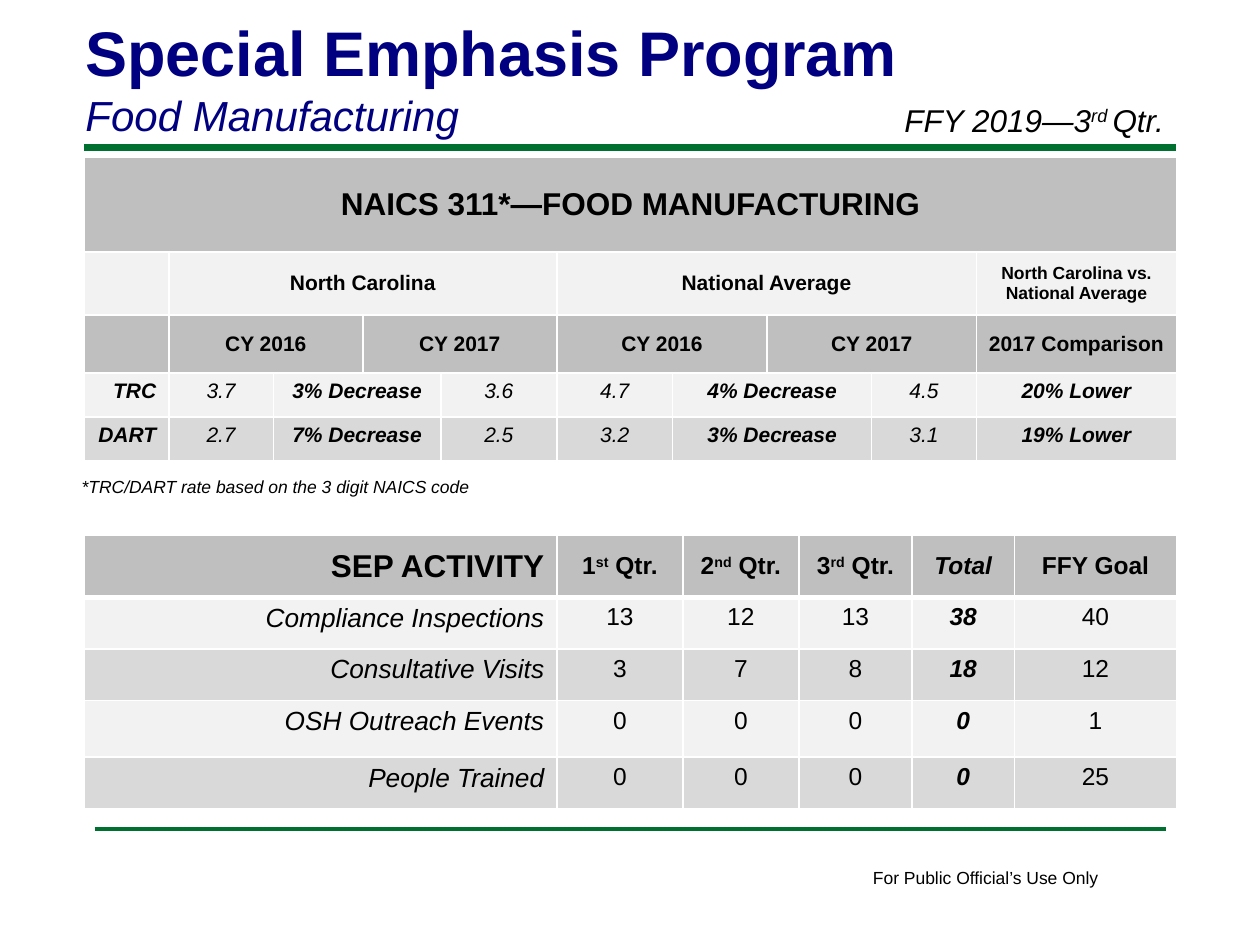
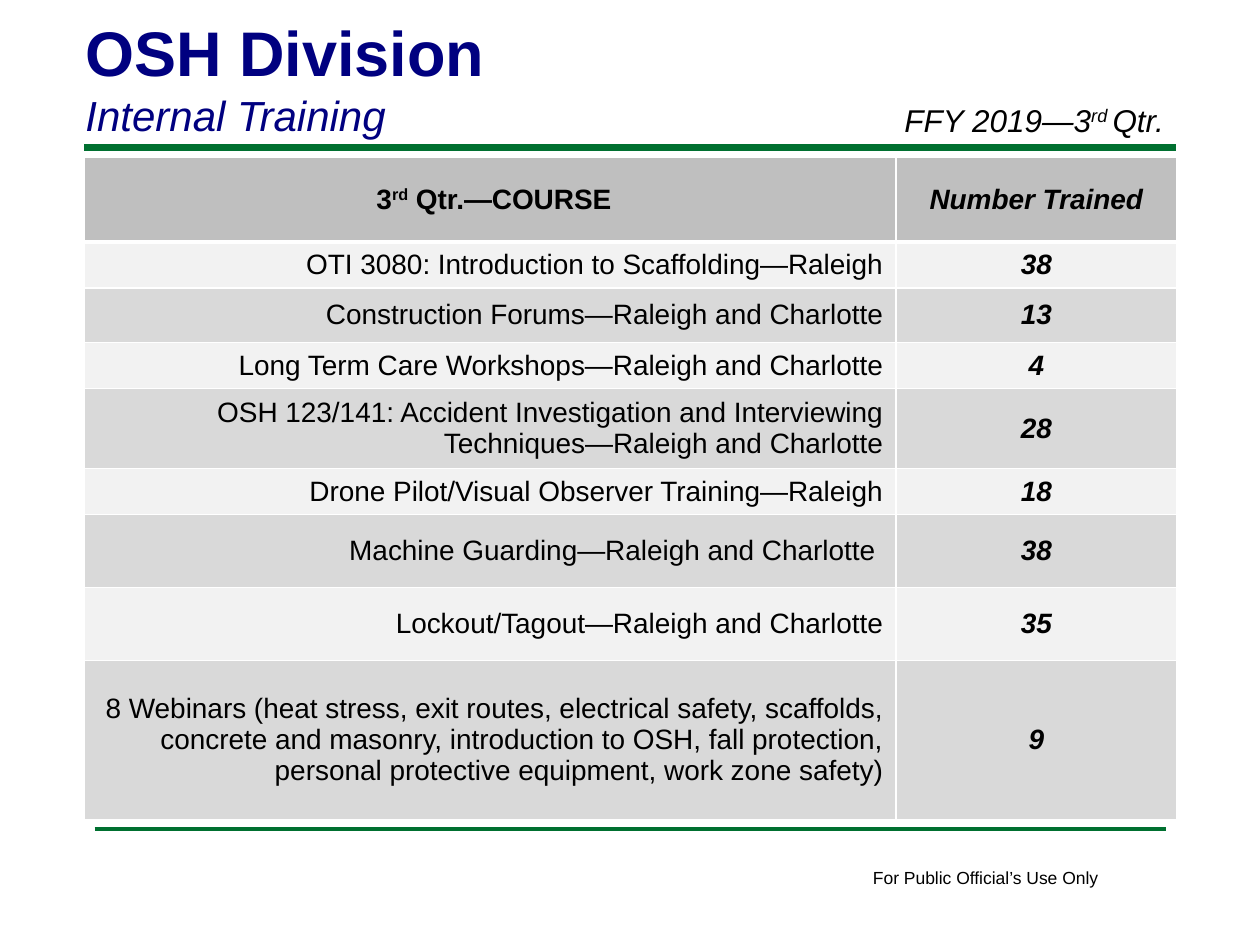
from dataclasses import dataclass, replace
from lxml import etree
from pptx import Presentation
from pptx.dml.color import RGBColor
from pptx.enum.shapes import MSO_CONNECTOR
from pptx.enum.text import MSO_ANCHOR, MSO_AUTO_SIZE, PP_ALIGN
from pptx.oxml.ns import qn
from pptx.util import Emu, Pt

PX = 9144
FONT = "Arial"
WHITE = RGBColor(0xFF, 0xFF, 0xFF)
BLACK = RGBColor(0x00, 0x00, 0x00)
NAVY = RGBColor(0x00, 0x00, 0x80)
GREEN = RGBColor(0x00, 0x70, 0x30)
HEADER_GRAY = RGBColor(0xBF, 0xBF, 0xBF)
LIGHT_GRAY = RGBColor(0xF2, 0xF2, 0xF2)
MID_GRAY = RGBColor(0xD9, 0xD9, 0xD9)

LEFT, CENTER, RIGHT = PP_ALIGN.LEFT, PP_ALIGN.CENTER, PP_ALIGN.RIGHT
TOP, MIDDLE = MSO_ANCHOR.TOP, MSO_ANCHOR.MIDDLE
STRAIGHT = MSO_CONNECTOR.STRAIGHT
GROW = MSO_AUTO_SIZE.SHAPE_TO_FIT_TEXT


@dataclass(frozen=True)
class Style:
    size: int
    bold: bool = False
    italic: bool = False
    align: PP_ALIGN = LEFT
    anchor: MSO_ANCHOR = MIDDLE
    color: RGBColor = BLACK


@dataclass(frozen=True)
class Cell:
    text: str
    style: Style
    span: int = 1


TITLE = Style(36, bold=True, color=NAVY)
SUBTITLE = Style(24, italic=True, color=NAVY)
PERIOD = Style(18, italic=True)
FOOTER = Style(10)
FOOTNOTE = Style(10, italic=True)


def px(length):
    return Emu(length * PX)


def write(paragraph, text, style):
    paragraph.alignment = style.align
    for index, piece in enumerate(text.split("^")):
        if not piece:
            continue
        run = paragraph.add_run()
        run.text = piece
        font = run.font
        font.name, font.size = FONT, Pt(style.size)
        font.bold, font.italic = style.bold, style.italic
        font.color.rgb = style.color
        if index % 2:
            run._r.get_or_add_rPr().set("baseline", "30000")


def add_text(slide, box, lines, wrap=True):
    frame = slide.shapes.add_textbox(*map(px, box)).text_frame
    frame.word_wrap = wrap
    frame.auto_size = GROW
    for index, (text, style) in enumerate(lines):
        paragraph = frame.add_paragraph() if index else frame.paragraphs[0]
        write(paragraph, text, style)


def add_rule(slide, left, top, width, weight):
    rule = slide.shapes.add_connector(
        STRAIGHT, px(left), px(top), px(left + width), px(top))
    rule.line.color.rgb = GREEN
    rule.line.width = Pt(weight)
    etree.SubElement(rule._element.spPr, qn("a:effectLst"))


def add_frame(slide, title, subtitle):
    add_rule(slide, 67, 117, 866, 4)
    add_rule(slide, 75, 658, 850, 2)
    add_text(slide, (683, 683, 201, 27),
             [("For Public Official’s Use Only", FOOTER)], wrap=False)
    add_text(slide, (58, 6, 825, 111), [(title, TITLE), (subtitle, SUBTITLE)])
    add_text(slide, (708, 75, 250, 40), [("FFY 2019—3^rd ^Qtr.", PERIOD)])


def set_borders(cell, bottom):
    properties = cell._tc.get_or_add_tcPr()
    for side, weight in zip("LRTB", (1, 1, 1, bottom)):
        line = etree.SubElement(
            properties, qn(f"a:ln{side}"), w=str(Pt(weight)))
        fill = etree.SubElement(line, qn("a:solidFill"))
        etree.SubElement(fill, qn("a:srgbClr"), val=str(WHITE))


def add_grid(slide, left, top, widths, heights, fills, rows, header_rule=1):
    table = slide.shapes.add_table(
        len(heights), len(widths), px(left), px(top),
        px(sum(widths)), px(sum(heights))).table
    table.first_row = table.horz_banding = False
    for column, width in zip(table.columns, widths):
        column.width = px(width)
    for row, height in zip(table.rows, heights):
        row.height = px(height)
    for row_index, (fill, cells) in enumerate(zip(fills, rows)):
        for cell in table.rows[row_index].cells:
            set_borders(cell, 1 if row_index else header_rule)
            cell.fill.solid()
            cell.fill.fore_color.rgb = fill
        column_index = 0
        for content in cells:
            cell = table.cell(row_index, column_index)
            column_index += content.span
            if content.span > 1:
                cell.merge(table.cell(row_index, column_index - 1))
            cell.vertical_anchor = content.style.anchor
            write(cell.text_frame.paragraphs[0], content.text, content.style)


def add_rate_table(slide, left, top):
    heading = Style(12, bold=True, align=CENTER)
    change = replace(heading, italic=True, anchor=TOP)
    rate = replace(change, bold=False)
    label = replace(change, align=RIGHT)
    banner = replace(heading, size=18)
    small = replace(heading, size=10)
    blank = Cell("", heading)
    years = [Cell(year, heading, 2) for year in ("CY 2016", "CY 2017")]
    rows = [
        [Cell("NAICS 311*—FOOD MANUFACTURING", banner, 10)],
        [blank, Cell("North Carolina", heading, 4),
         Cell("National Average", heading, 4),
         Cell("North Carolina vs. National Average", small)],
        [blank, *years, *years, Cell("2017 Comparison", heading)],
    ]
    columns = [(label, 1), *[(rate, 1), (change, 2), (rate, 1)] * 2, (change, 1)]
    for texts in (
        ("TRC", "3.7", "3% Decrease", "3.6", "4.7", "4% Decrease", "4.5",
         "20% Lower"),
        ("DART", "2.7", "7% Decrease", "2.5", "3.2", "3% Decrease", "3.1",
         "19% Lower"),
    ):
        rows.append([Cell(text, *column) for text, column in zip(texts, columns)])
    add_grid(slide, left, top,
             (67, 83, 71, 62, 92, 92, 75, 83, 83, 159),
             (75, 50, 46, 35, 35),
             (HEADER_GRAY, LIGHT_GRAY, HEADER_GRAY, LIGHT_GRAY, MID_GRAY), rows)
    add_text(slide, (left - 12, top + 248, 338, 27),
             [("*TRC/DART rate based on the 3 digit NAICS code", FOOTNOTE)],
             wrap=False)


def add_activity_table(slide, left, top):
    heading = Style(14, bold=True, align=CENTER)
    count = replace(heading, bold=False, anchor=TOP)
    total = replace(count, bold=True, italic=True)
    activity = Style(15, italic=True, align=RIGHT, anchor=TOP)
    rows = [[
        Cell("SEP ACTIVITY", replace(heading, size=18, align=RIGHT)),
        *[Cell(f"{quarter} Qtr.", heading)
          for quarter in ("1^st^", "2^nd^", "3^rd^")],
        Cell("Total", replace(heading, italic=True)),
        Cell("FFY Goal", heading),
    ]]
    styles = (activity, count, count, count, total, count)
    for values in (
        ("Compliance Inspections", 13, 12, 13, 38, 40),
        ("Consultative Visits", 3, 7, 8, 18, 12),
        ("OSH Outreach Events", 0, 0, 0, 0, 1),
        ("People Trained", 0, 0, 0, 0, 25),
    ):
        rows.append([Cell(str(value), style)
                     for value, style in zip(values, styles)])
    add_grid(slide, left, top, (375, 100, 92, 90, 81, 129),
             (49, 41, 41, 45, 41),
             (HEADER_GRAY, *(LIGHT_GRAY, MID_GRAY) * 2), rows, header_rule=3)


def add_course_table(slide, left, top):
    heading = Style(16, bold=True, align=CENTER)
    trained = replace(heading, italic=True)
    course = Style(16, align=RIGHT)
    rows = [[Cell(" 3^rd^ Qtr.—COURSE", heading), Cell("Number Trained", trained)]]
    for name, number in (
        ("OTI 3080: Introduction to Scaffolding—Raleigh", 38),
        ("Construction Forums—Raleigh and Charlotte", 13),
        ("Long Term Care Workshops—Raleigh and Charlotte", 4),
        ("OSH 123/141: Accident Investigation and Interviewing "
         "Techniques—Raleigh and Charlotte", 28),
        ("Drone Pilot/Visual Observer Training—Raleigh", 18),
        ("Machine Guarding—Raleigh and Charlotte ", 38),
        ("Lockout/Tagout—Raleigh and Charlotte", 35),
        ("8 Webinars (heat stress, exit routes, electrical safety, scaffolds, "
         "concrete and masonry, introduction to OSH, fall protection, "
         "personal protective equipment, work zone safety)", 9),
    ):
        rows.append([Cell(name, course), Cell(str(number), trained)])
    add_grid(slide, left, top, (644, 223),
             (67, 36, 43, 36, 62, 36, 58, 58, 126),
             (HEADER_GRAY, *(LIGHT_GRAY, MID_GRAY) * 4), rows, header_rule=3)


def build_emphasis_slide(slide):
    add_frame(slide, "Special Emphasis Program", "Food Manufacturing")
    add_rate_table(slide, 67, 125)
    add_activity_table(slide, 67, 425)


def build_training_slide(slide):
    add_frame(slide, "OSH Division", "Internal Training")
    add_course_table(slide, 67, 125)


def main():
    presentation = Presentation()
    presentation.slide_width, presentation.slide_height = px(1000), px(750)
    blank_layout = presentation.slide_layouts[6]
    for build in (build_emphasis_slide, build_training_slide):
        build(presentation.slides.add_slide(blank_layout))
    presentation.save("out.pptx")


if __name__ == "__main__":
    main()
